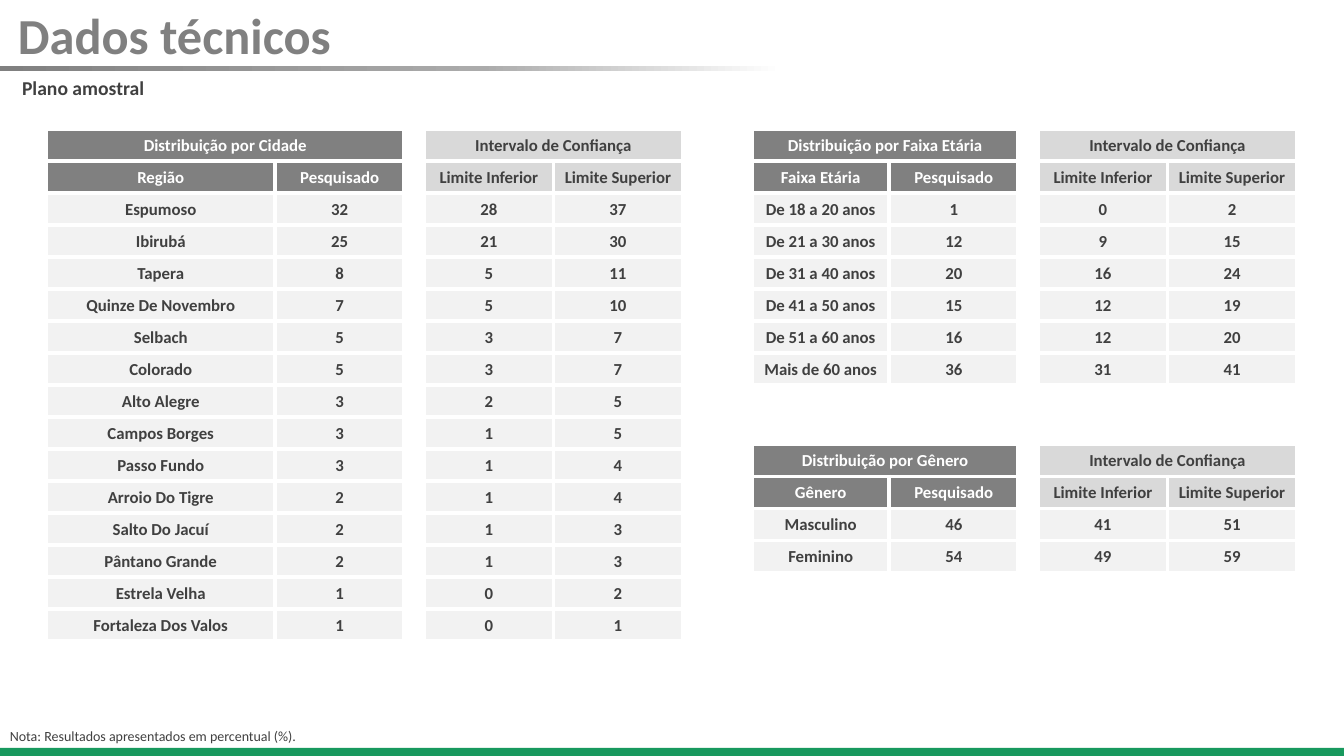
from copy import deepcopy

from lxml.etree import SubElement
from pptx import Presentation
from pptx.dml.color import RGBColor
from pptx.enum.shapes import MSO_SHAPE
from pptx.enum.text import MSO_ANCHOR, PP_ALIGN
from pptx.oxml.ns import qn
from pptx.util import Inches, Pt

WHITE = RGBColor(0xFF, 0xFF, 0xFF)
GRAY = RGBColor(0x80, 0x80, 0x80)
MID_GRAY = RGBColor(0xAB, 0xAB, 0xAB)
LIGHT_GRAY = RGBColor(0xD9, 0xD9, 0xD9)
PALE_GRAY = RGBColor(0xF2, 0xF2, 0xF2)
DARK = RGBColor(0x40, 0x40, 0x40)
GREEN = RGBColor(0x18, 0x99, 0x5E)

ROW_HEIGHT = 1.27 / 4
VALUE_WIDTH = 1.28
GAP_WIDTH = 0.2
GAP_COLUMN = 2

CITIES = [
    ("Espumoso", 32, 28, 37),
    ("Ibirubá", 25, 21, 30),
    ("Tapera", 8, 5, 11),
    ("Quinze De Novembro", 7, 5, 10),
    ("Selbach", 5, 3, 7),
    ("Colorado", 5, 3, 7),
    ("Alto Alegre", 3, 2, 5),
    ("Campos Borges", 3, 1, 5),
    ("Passo Fundo", 3, 1, 4),
    ("Arroio Do Tigre", 2, 1, 4),
    ("Salto Do Jacuí", 2, 1, 3),
    ("Pântano Grande", 2, 1, 3),
    ("Estrela Velha", 1, 0, 2),
    ("Fortaleza Dos Valos", 1, 0, 1),
]
AGES = [
    ("De 18 a 20 anos", 1, 0, 2),
    ("De 21 a 30 anos", 12, 9, 15),
    ("De 31 a 40 anos", 20, 16, 24),
    ("De 41 a 50 anos", 15, 12, 19),
    ("De 51 a 60 anos", 16, 12, 20),
    ("Mais de 60 anos", 36, 31, 41),
]
GENDERS = [("Masculino", 46, 41, 51), ("Feminino", 54, 49, 59)]


def write_text(frame, text, font="Calibri", size=12, color=DARK, bold=True,
               align=PP_ALIGN.LEFT, line_spacing=None):
    paragraph = frame.paragraphs[0]
    paragraph.alignment = align
    paragraph.line_spacing = line_spacing
    run = paragraph.add_run()
    run.text = text
    run.font.name = font
    run.font.size = Pt(size)
    run.font.bold = bold
    run.font.color.rgb = color


class SlideBuilder:
    def __init__(self, slide, font):
        self.slide = slide
        self.font = font

    def bar(self, left, top, width, height):
        shape = self.slide.shapes.add_shape(
            MSO_SHAPE.RECTANGLE, Inches(left), Inches(top), Inches(width), Inches(height))
        shape.shadow.inherit = False
        shape.line.fill.background()
        return shape

    def solid_bar(self, *box, color):
        fill = self.bar(*box).fill
        fill.solid()
        fill.fore_color.rgb = color

    def gradient_bar(self, *box, stops):
        shape = self.bar(*box)
        shape.fill.gradient()
        shape.fill.gradient_angle = 0
        stop_list = next(shape.element.iter(qn("a:gsLst")))
        while len(stop_list) < len(stops):
            stop_list.append(deepcopy(stop_list[0]))
        for stop, (position, color) in zip(shape.fill.gradient_stops, stops):
            stop.position = position
            stop.color.rgb = color

    def text(self, left, top, width, height, text, wrap=True, **style):
        box = self.slide.shapes.add_textbox(
            Inches(left), Inches(top), Inches(width), Inches(height))
        box.text_frame.word_wrap = wrap
        write_text(box.text_frame, text, font=self.font, **style)

    def cell(self, cell, text, fill, color):
        cell.margin_left = cell.margin_right = cell.margin_top = Inches(0.01)
        cell.margin_bottom = 0
        cell.vertical_anchor = MSO_ANCHOR.MIDDLE
        properties = cell._tc.get_or_add_tcPr()
        for side in ("a:lnL", "a:lnR", "a:lnT", "a:lnB"):
            line = SubElement(properties, qn(side), w=str(Pt(3)))
            solid = SubElement(line, qn("a:solidFill"))
            SubElement(solid, qn("a:srgbClr"), val=str(WHITE))
        if fill is None:
            cell.fill.background()
        else:
            cell.fill.solid()
            cell.fill.fore_color.rgb = fill
        write_text(cell.text_frame, text, font=self.font, color=color, align=PP_ALIGN.CENTER)

    def distribution(self, left, top, label_width, title, label, records):
        rows = [
            (title, "", "", "Intervalo de Confiança", ""),
            (label, "Pesquisado", "", "Limite Inferior", "Limite Superior"),
        ]
        rows += [(name, share, "", low, high) for name, share, low, high in records]
        widths = [label_width, VALUE_WIDTH, GAP_WIDTH, VALUE_WIDTH, VALUE_WIDTH]
        table = self.slide.shapes.add_table(
            len(rows), len(widths), Inches(left), Inches(top),
            Inches(sum(widths)), Inches(ROW_HEIGHT * len(rows))).table
        table.first_row = table.horz_banding = False
        for column, width in zip(table.columns, widths):
            column.width = Inches(width)
        for row_index, row in enumerate(rows):
            for column_index, value in enumerate(row):
                fill, color = PALE_GRAY, DARK
                if column_index == GAP_COLUMN:
                    fill = None
                elif row_index < 2:
                    is_survey = column_index < GAP_COLUMN
                    fill, color = (GRAY, WHITE) if is_survey else (LIGHT_GRAY, DARK)
                self.cell(table.cell(row_index, column_index), str(value), fill, color)
        for first in (0, GAP_COLUMN + 1):
            table.cell(0, first).merge(table.cell(0, first + 1))


def main():
    presentation = Presentation()
    presentation.slide_width = Inches(13.33)
    presentation.slide_height = Inches(7.5)
    slide = presentation.slides.add_slide(presentation.slide_layouts[6])
    builder = SlideBuilder(slide, "Calibri")

    builder.gradient_bar(0, 0.65, 8.53, 0.05,
                         stops=[(0, GRAY), (0.56, MID_GRAY), (0.91, WHITE)])
    builder.solid_bar(0, 7.42, 13.33, 0.08, color=GREEN)
    builder.text(0.08, 0.06, 13.1, 0.68, "Dados técnicos",
                 size=36, color=GRAY, line_spacing=0.9)
    builder.text(0.12, 0.7, 1.42, 0.34, "Plano amostral", wrap=False, size=14)
    builder.text(0, 7.17, 3.1, 0.27, "Nota: Resultados apresentados em percentual (%).",
                 size=10, bold=False)

    builder.distribution(0.46, 1.28, 2.27, "Distribuição por Cidade", "Região", CITIES)
    builder.distribution(7.46, 1.28, 1.36, "Distribuição por Faixa Etária",
                         "Faixa Etária", AGES)
    builder.distribution(7.46, 4.41, 1.36, "Distribuição por Gênero", "Gênero", GENDERS)

    presentation.save("out.pptx")


if __name__ == "__main__":
    main()
